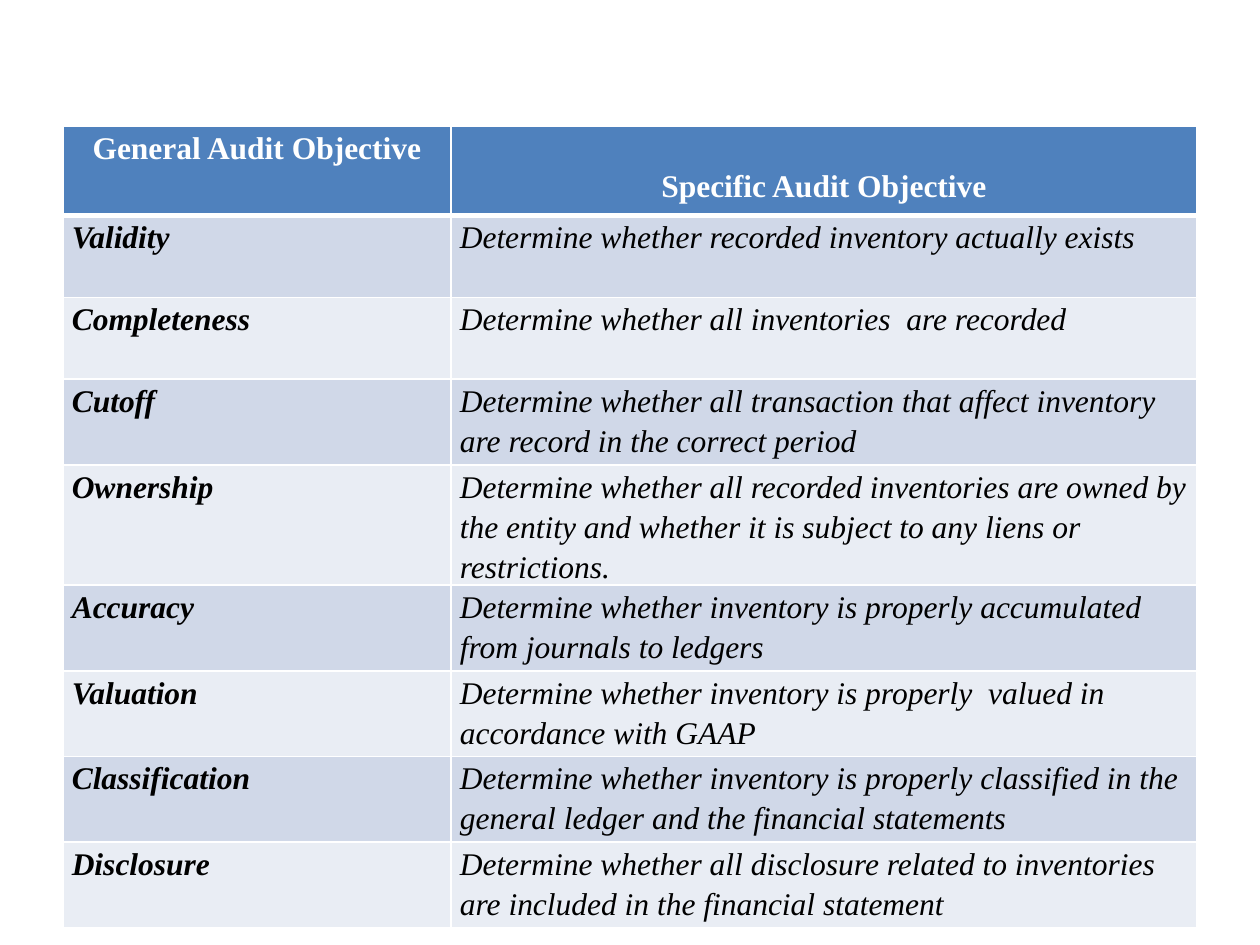
from typing import NamedTuple

from lxml import etree
from pptx import Presentation
from pptx.dml.color import RGBColor
from pptx.enum import text
from pptx.oxml.ns import qn
from pptx.util import Inches, Pt

WHITE = RGBColor(0xFF, 0xFF, 0xFF)
BLACK = RGBColor(0x00, 0x00, 0x00)
HEADER_BLUE = RGBColor(0x4F, 0x81, 0xBD)
BANDS = (RGBColor(0xD0, 0xD8, 0xE8), RGBColor(0xE9, 0xED, 0xF4))

FONT = "Times New Roman"
COLUMN_WIDTHS = (3.08, 5.92)
ROW_HEIGHTS = (0.71, 0.65, 0.65) + (0.68,) * 6
HEADER_RULE = 3
GRID_RULE = 1


class Objective(NamedTuple):
    general: str
    specific: str


HEADER = Objective("General Audit Objective", "Specific Audit Objective")
OBJECTIVES = (
    Objective("Validity", "Determine whether recorded inventory actually exists"),
    Objective("Completeness", "Determine whether all inventories  are recorded"),
    Objective("Cutoff", "Determine whether all transaction that affect inventory "
              "are record in the correct period"),
    Objective("Ownership", "Determine whether all recorded inventories are owned by the "
              "entity and whether it is subject to any liens or restrictions."),
    Objective("Accuracy", "Determine whether inventory is properly accumulated "
              "from journals to ledgers"),
    Objective("Valuation", "Determine whether inventory is properly  valued "
              "in accordance with GAAP"),
    Objective("Classification", "Determine whether inventory is properly classified in the "
              "general ledger and the financial statements"),
    Objective("Disclosure", "Determine whether all disclosure related to inventories "
              "are included in the financial statement"),
)


def set_borders(cell, top: float, bottom: float) -> None:
    """Draw white cell borders; must run before the cell gets its fill."""
    tc_pr = cell._tc.get_or_add_tcPr()
    widths = {"a:lnL": GRID_RULE, "a:lnR": GRID_RULE, "a:lnT": top, "a:lnB": bottom}
    for tag, width in widths.items():
        ln = etree.SubElement(tc_pr, qn(tag), w=str(Pt(width)))
        fill = etree.SubElement(ln, qn("a:solidFill"))
        etree.SubElement(fill, qn("a:srgbClr"), val=str(WHITE))


def write_cell(cell, words: str, fill: RGBColor, color: RGBColor, bold: bool,
               italic: bool, align: text.PP_ALIGN) -> None:
    cell.margin_left = cell.margin_right = Inches(0.07)
    cell.margin_top = cell.margin_bottom = 0
    cell.fill.solid()
    cell.fill.fore_color.rgb = fill
    p = cell.text_frame.paragraphs[0]
    p.alignment = align
    p.line_spacing = 1.15
    r = p.add_run()
    r.text = words
    r.font.name = FONT
    r.font.size = Pt(18)
    r.font.bold = bold
    r.font.italic = italic
    r.font.color.rgb = color


def add_objectives_table(slide) -> None:
    rows = (HEADER,) + OBJECTIVES
    frame = slide.shapes.add_table(len(rows), len(COLUMN_WIDTHS), Inches(0.5), Inches(1),
                                   Inches(sum(COLUMN_WIDTHS)), Inches(sum(ROW_HEIGHTS)))
    table = frame.table
    for column, width in zip(table.columns, COLUMN_WIDTHS):
        column.width = Inches(width)
    for row, height in zip(table.rows, ROW_HEIGHTS):
        row.height = Inches(height)

    for i, objective in enumerate(rows):
        is_header = i == 0
        for j, words in enumerate(objective):
            cell = table.cell(i, j)
            set_borders(cell, top=HEADER_RULE if i == 1 else GRID_RULE,
                        bottom=HEADER_RULE if is_header else GRID_RULE)
            if is_header:
                write_cell(cell, words, HEADER_BLUE, WHITE, True, False,
                           text.PP_ALIGN.CENTER)
            else:
                write_cell(cell, words, BANDS[(i - 1) % 2], BLACK, j == 0, True,
                           text.PP_ALIGN.LEFT)
    # The second heading sits one line lower than the first.
    table.cell(0, 1).margin_top = Inches(0.3)


def main() -> None:
    prs = Presentation()
    prs.slide_width, prs.slide_height = Inches(10), Inches(7.5)
    blank_layout = prs.slide_layouts[6]
    add_objectives_table(prs.slides.add_slide(blank_layout))
    prs.save("out.pptx")


if __name__ == "__main__":
    main()
